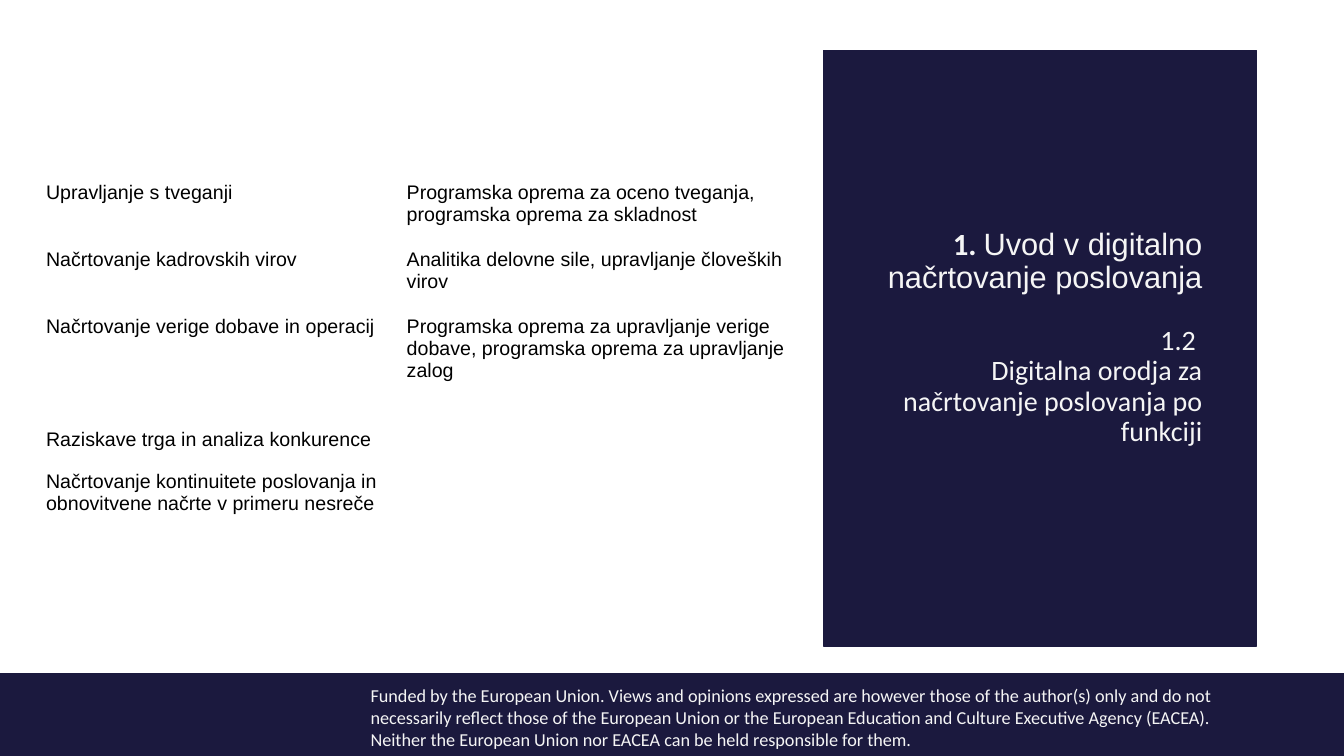
from dataclasses import dataclass

from pptx import Presentation
from pptx.dml.color import RGBColor
from pptx.enum.shapes import MSO_SHAPE
from pptx.enum.text import MSO_ANCHOR, PP_ALIGN
from pptx.util import Cm, Pt

RECTANGLE = MSO_SHAPE.RECTANGLE
TOP, BOTTOM = MSO_ANCHOR.TOP, MSO_ANCHOR.BOTTOM
LEFT, RIGHT = PP_ALIGN.LEFT, PP_ALIGN.RIGHT
SLIDE_WIDTH, SLIDE_HEIGHT = 33.87, 19.05


@dataclass(frozen=True)
class Theme:
    navy: RGBColor = RGBColor(0x1B, 0x19, 0x3E)
    light: RGBColor = RGBColor(0xF5, 0xF5, 0xF5)
    black: RGBColor = RGBColor(0, 0, 0)
    sans: str = "Arial"
    humanist: str = "Calibri"
    title_size: int = 22
    subtitle_size: int = 20
    table_size: int = 14
    footer_size: int = 13


@dataclass(frozen=True)
class TextRun:
    text: str
    font: str
    size: int
    color: RGBColor
    bold: bool = False


class SlideBuilder:
    def __init__(self, slide, theme):
        self.slide = slide
        self.theme = theme

    def panel(self, left, top, width, height):
        shape = self.slide.shapes.add_shape(
            RECTANGLE, Cm(left), Cm(top), Cm(width), Cm(height))
        shape.shadow.inherit = False
        shape.fill.solid()
        shape.fill.fore_color.rgb = self.theme.navy
        shape.line.color.rgb = self.theme.navy
        shape.line.width = Pt(1)

    def fill_text(self, frame, paragraphs, align=LEFT, line_spacing=1.0):
        """Fill a text frame from a list of paragraphs, each a list of TextRun."""
        frame.word_wrap = True
        for index, text_runs in enumerate(paragraphs):
            paragraph = frame.add_paragraph() if index else frame.paragraphs[0]
            paragraph.alignment = align
            paragraph.line_spacing = line_spacing
            for text_run in text_runs:
                run = paragraph.add_run()
                run.text = text_run.text
                run.font.name = text_run.font
                run.font.size = Pt(text_run.size)
                run.font.bold = text_run.bold
                run.font.color.rgb = text_run.color

    def text(self, left, top, width, height, paragraphs,
             align=LEFT, anchor=TOP, line_spacing=1.0):
        box = self.slide.shapes.add_textbox(Cm(left), Cm(top), Cm(width), Cm(height))
        box.text_frame.vertical_anchor = anchor
        self.fill_text(box.text_frame, paragraphs, align, line_spacing)

    def table(self, left, top, column_widths, row_heights, rows, bottom_rows=()):
        """Add a plain table; rows listed in bottom_rows sit on the cell's bottom."""
        table = self.slide.shapes.add_table(
            len(rows), len(column_widths), Cm(left), Cm(top),
            Cm(sum(column_widths)), Cm(sum(row_heights))).table
        table.first_row = False
        table.horz_banding = False
        for column, width in zip(table.columns, column_widths):
            column.width = Cm(width)
        for row_index, (row, height) in enumerate(zip(rows, row_heights)):
            table.rows[row_index].height = Cm(height)
            for column_index, text in enumerate(row):
                cell = table.cell(row_index, column_index)
                cell.fill.background()
                cell.margin_left = cell.margin_right = Cm(0.25)
                cell.margin_top = cell.margin_bottom = Cm(0.25)
                cell.vertical_anchor = BOTTOM if row_index in bottom_rows else TOP
                if text:
                    self.fill_text(cell.text_frame, [[TextRun(
                        text, self.theme.sans, self.theme.table_size, self.theme.black)]])


FOOTER = (
    "Funded by the European Union. Views and opinions expressed are however those of "
    "the author(s) only and do not necessarily reflect those of the European Union or "
    "the European Education and Culture Executive Agency (EACEA). Neither the European "
    "Union nor EACEA can be held responsible for them.")

PLANNING_TOOLS = [
    ("Upravljanje s tveganji",
     "Programska oprema za oceno tveganja, programska oprema za skladnost"),
    ("Načrtovanje kadrovskih virov",
     "Analitika delovne sile, upravljanje človeških virov"),
    ("Načrtovanje verige dobave in operacij",
     "Programska oprema za upravljanje verige dobave, programska oprema za upravljanje zalog"),
    ("Raziskave trga in analiza konkurence", ""),
    ("Načrtovanje kontinuitete poslovanja in obnovitvene načrte v primeru nesreče", ""),
]


def main():
    presentation = Presentation()
    presentation.slide_width = Cm(SLIDE_WIDTH)
    presentation.slide_height = Cm(SLIDE_HEIGHT)
    slide = presentation.slides.add_slide(presentation.slide_layouts[6])
    theme = Theme()
    builder = SlideBuilder(slide, theme)

    footer_top = 16.97
    builder.panel(0, footer_top, SLIDE_WIDTH, SLIDE_HEIGHT - footer_top)
    builder.panel(20.75, 1.27, 10.92, 15.01)
    builder.text(9.09, 17.12, 22.45, 1.93, [
        [TextRun(FOOTER, theme.humanist, theme.footer_size, theme.light)]])

    heading_left, heading_width = 21.84, 8.71
    builder.text(heading_left, 4.95, heading_width, 2.62, [[
        TextRun("1. ", theme.humanist, theme.title_size, theme.light, bold=True),
        TextRun("Uvod v digitalno načrtovanje poslovanja",
                theme.sans, theme.title_size, theme.light),
    ]], RIGHT, BOTTOM, 0.9)
    subtitle = ["1.2 ", "Digitalna orodja za načrtovanje poslovanja po funkciji"]
    builder.text(heading_left, 8.1, heading_width, 7.14, [
        [TextRun(line, theme.humanist, theme.subtitle_size, theme.light)]
        for line in subtitle], RIGHT, TOP, 0.9)

    two_lines, three_lines = 1.62, 2.17
    builder.table(0.91, 4.34, [9.09, 10.31],
                  [two_lines, two_lines, three_lines, two_lines, two_lines],
                  PLANNING_TOOLS, bottom_rows=(3,))
    presentation.save("out.pptx")


if __name__ == "__main__":
    main()
